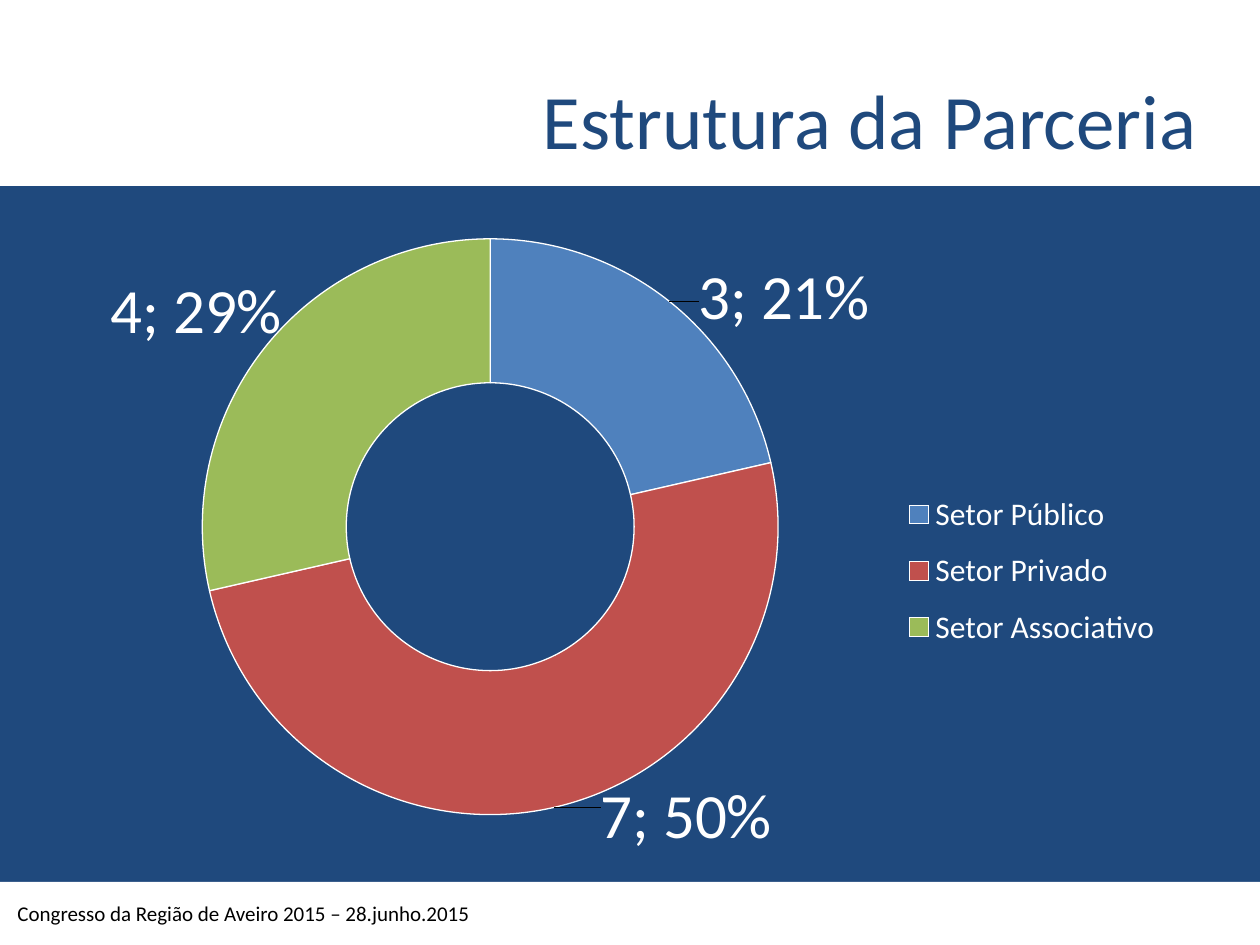
from pptx import Presentation
from pptx.chart.data import CategoryChartData as Data
from pptx.dml.color import RGBColor as Rgb
from pptx.enum.chart import XL_CHART_TYPE as Kind, XL_LEGEND_POSITION as Side
from pptx.enum.shapes import MSO_SHAPE as Form
from pptx.enum.text import MSO_ANCHOR as Anchor, PP_ALIGN as Align
from pptx.oxml import parse_xml
from pptx.oxml.ns import nsdecls, qn
from pptx.util import Emu, Pt

HUES = {"navy": "1F497D", "white": "FFFFFF", "black": "000000",
        "blue": "4F81BD", "red": "C0504D", "green": "9BBB59"}


def px(num):
    return Emu(round(num * 914400 / 126))


def hue(name):
    return Rgb.from_string(HUES[name])


def layout(**vals):
    tags = "".join(f'<c:{key} val="{val}"/>' for key, val in vals.items())
    return parse_xml(f'<c:layout {nsdecls("c")}><c:manualLayout>{tags}'
                     '</c:manualLayout></c:layout>')


class Deck:
    """Holds the style and the current slide."""

    def __init__(self, wide, high, face="Calibri"):
        self.face = face
        self.file = Presentation()
        self.file.slide_width, self.file.slide_height = px(wide), px(high)
        self.slide = self.file.slides.add_slide(self.file.slide_layouts[5])
        self.shapes = self.slide.shapes
        self.paint(self.slide.background.fill, "navy")

    def paint(self, fill, color):
        fill.solid()
        fill.fore_color.rgb = hue(color)

    def font(self, font, size, color):
        for key, val in {"name": self.face, "size": Pt(size), "bold": False}.items():
            setattr(font, key, val)
        font.color.rgb = hue(color)

    def band(self, *box):
        shape = self.shapes.add_shape(Form.RECTANGLE, *map(px, box))
        shape.shadow.inherit = False
        self.paint(shape.fill, "white")
        shape.line.fill.background()

    def fit(self, shape, text, size, color, align, **form):
        frame = shape.text_frame
        frame.text = text
        for key, val in {"word_wrap": True, **form}.items():
            setattr(frame, key, val)
        para = frame.paragraphs[0]
        para.alignment = align
        self.font(para.runs[0].font, size, color)

    def title(self, text, *box):
        shape = self.shapes.title
        for key, val in zip(("left", "top", "width", "height"), box):
            setattr(shape, key, px(val))
        self.shapes.element.append(shape.element)
        self.fit(shape, text, 44, "navy", Align.RIGHT, vertical_anchor=Anchor.BOTTOM,
                 margin_left=0, margin_right=0, margin_top=px(6), margin_bottom=0)

    def note(self, text, *box):
        shape = self.shapes.add_textbox(*map(px, box))
        self.fit(shape, text, 12, "black", Align.LEFT, vertical_anchor=Anchor.MIDDLE)

    def ring(self, parts, *box):
        data = Data()
        data.categories = [part[0] for part in parts]
        data.add_series("Series 1", [part[1] for part in parts])
        chart = self.shapes.add_chart(Kind.DOUGHNUT, *map(px, box), data).chart
        chart.has_title = False
        self.font(chart.font, 18, "white")
        area = chart.plots[0]
        area.vary_by_categories = True
        row = area.series[0]
        tags = row.data_labels
        self.font(tags.font, 36, "white")
        tags.show_value = tags.show_percentage = True
        for idx, part in enumerate(parts):
            self.slice(row.points[idx], part[2])
        root = chart.element
        for node, part in zip(root.iter(qn("c:dLbl")), parts):
            self.tag(node, *part[3])
        self.place(chart, root)

    def slice(self, point, color):
        form = point.format
        self.paint(form.fill, color)
        form.line.color.rgb = hue("white")
        form.line.width = Pt(0.75)
        self.font(point.data_label.font, 36, "white")

    def tag(self, node, x, y):
        node.find(qn("c:idx")).addnext(layout(x=x, y=y))
        node.find(qn("c:showPercent")).set("val", "1")
        mark = parse_xml(f'<c:separator {nsdecls("c")}>; </c:separator>')
        node.find(qn("c:showBubbleSize")).addnext(mark)

    def place(self, chart, root):
        chart.has_legend = True
        key = chart.legend
        key.position, key.include_in_layout = Side.RIGHT, False
        self.font(key.font, 18, "white")
        plot = root.find(f".//{qn('c:plotArea')}")
        side = root.find(f".//{qn('c:legend')}")
        for node in (plot, side):
            for old in node.findall(qn("c:layout")):
                node.remove(old)
        plot.insert(0, layout(layoutTarget="inner", xMode="edge", yMode="edge",
                              x=0.126, y=0.052, w=0.506, h=0.864))
        side.find(qn("c:legendPos")).addnext(layout(
            xMode="edge", yMode="edge", x=0.74, y=0.41, w=0.23, h=0.28))


def main():
    deck = Deck(1260, 945)
    deck.band(0, 882, 1260, 63)
    deck.band(0, 0, 1260, 186)
    deck.title("Estrutura da Parceria", 64, 8, 1133, 157)
    deck.ring([("Setor Público", 3, "blue", (0.14, -0.09)),
               ("Setor Privado", 7, "red", (0.13, 0.12)),
               ("Setor Associativo", 4, "green", (-0.11, -0.12))],
              59, 204, 1138, 667)
    deck.note("Congresso da Região de Aveiro 2015 – 28.junho.2015", 5, 888, 551, 50)
    deck.file.save("out.pptx")


if __name__ == "__main__":
    main()
